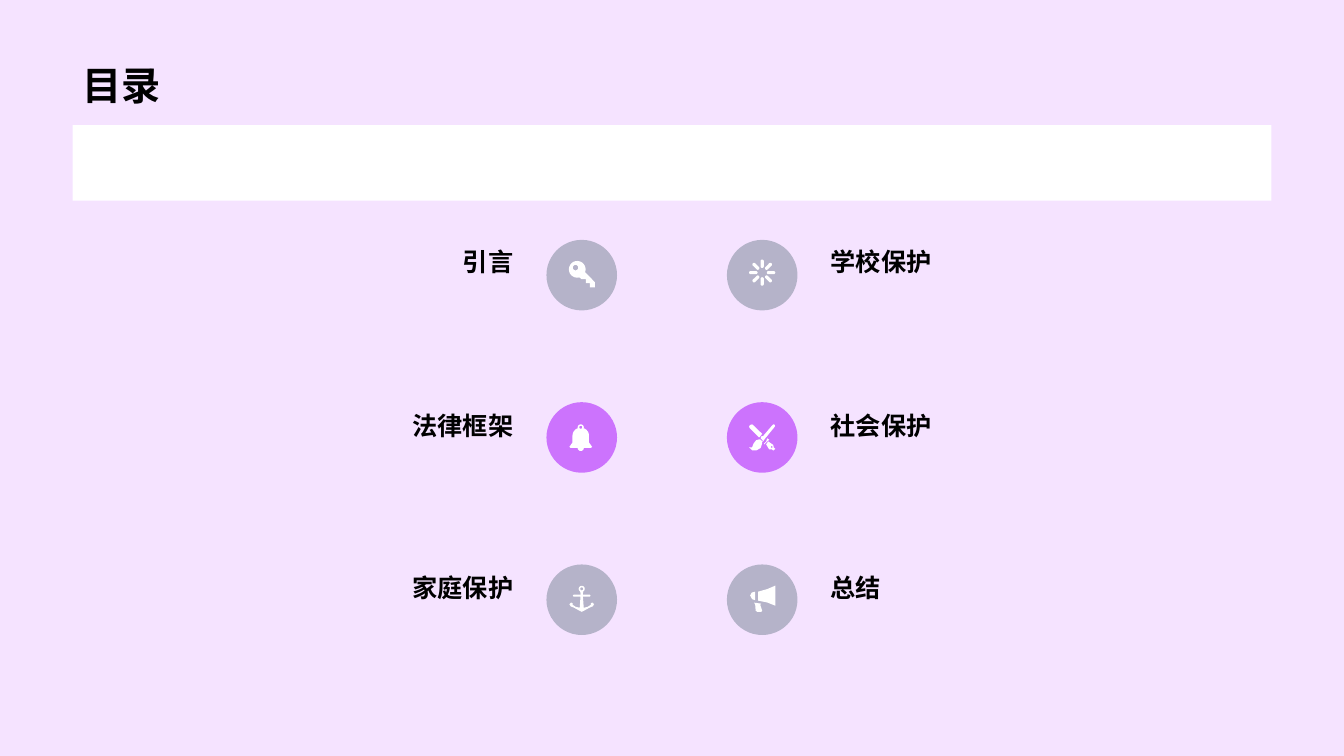
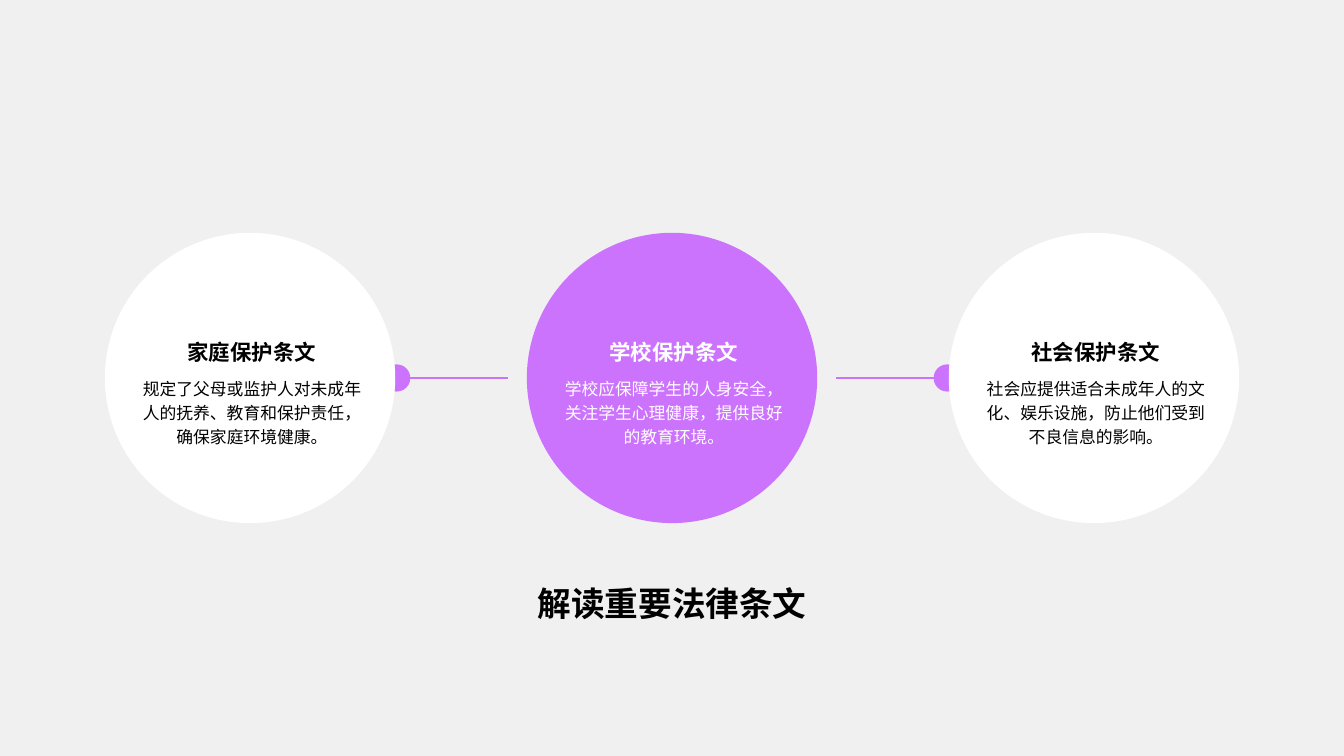
from dataclasses import dataclass
from math import cos, radians, sin

from lxml import etree
from pptx import Presentation
from pptx import util as u
from pptx.dml.color import RGBColor
from pptx.enum import shapes, text
from pptx.oxml.ns import qn

Point = tuple[float, float]
Outline = list[Point]

FONT = "Arial"
BLACK = RGBColor(0x00, 0x00, 0x00)
WHITE = RGBColor(0xFF, 0xFF, 0xFF)
LILAC = RGBColor(0xF5, 0xE3, 0xFF)
PURPLE = RGBColor(0xCC, 0x73, 0xFD)
SLATE = RGBColor(0x77, 0x84, 0x95)
PALE_GREY = RGBColor(0xF0, 0xF0, 0xF0)

WIDTH, HEIGHT = 13.33, 7.5
CENTRE = WIDTH / 2
MARGIN = 0.72
CONTENT_WIDTH = WIDTH - 2 * MARGIN

DISC = 0.7
DISC_COLUMNS = (5.77, 7.56)
FIRST_ROW, ROW_PITCH = 2.73, 1.61
LABEL_BOTTOMS = (2.79, 4.42, 6.03)
LABEL_LEFTS = (0.73, 8.14)
LABEL_WIDTH, LABEL_HEIGHT = 4.46, 0.56

CIRCLE, CIRCLE_PITCH = 2.88, 4.185
DOT = 0.27
DOT_OFFSET, LINE_OFFSET = 2.73, 1.63
CLAUSE_WIDTH = 2.37
CLAUSE_SHIFT = 0.02


@dataclass(frozen=True)
class Topic:
    label: str
    column: int
    row: int
    icon: list[Outline]


@dataclass(frozen=True)
class Clause:
    heading: str
    body: str
    fill: RGBColor
    ink: RGBColor


def arc(x: float, y: float, radius: float, start: float = 0, sweep: float = 360) -> Outline:
    steps = 20
    angles = [radians(start + sweep * step / steps) for step in range(steps + 1)]
    return [(x + radius * cos(angle), y + radius * sin(angle)) for angle in angles]


def key_icon() -> list[Outline]:
    shaft = [(130, 70), (130, 120), (80, 120), (80, 80), (40, 80), (40, 40), (0, 40)]
    return [arc(-45, -58, 83, 75, 305) + shaft, arc(-62, -75, 27)]


def bell_icon() -> list[Outline]:
    base = [(-92, 50), (-122, 92), (-112, 104), (-40, 104)]
    clapper = arc(-10, 104, 30, 180, -180)
    side = [(92, 104), (102, 92), (72, 50)]
    dome = arc(-10, -15, 82, 0, -68) + arc(-10, -100, 30, 30, -240) + arc(-10, -15, 82, -112, -68)
    return [base + clapper + side + dome, arc(-10, -101, 15)]


def anchor_icon() -> list[Outline]:
    half = [(-10, -50), (-80, -50), (-88, -40), (-80, -30), (-12, -30), (-20, 80),
            (-60, 70), (-90, 50), (-90, 35), (-105, 28), (-122, 45), (-110, 65),
            (-75, 80), (-30, 105), (0, 120)]
    mirrored = [(-x, y) for x, y in reversed(half)]
    return [arc(0, -108, 30, 60, -300) + half + mirrored, arc(0, -108, 15)]


def spoke(angle: float) -> Outline:
    across, down = cos(radians(angle)), sin(radians(angle))
    outer, inner, rise, radius = 114, 62, -25, 16
    return (arc(outer * across, rise + outer * down, radius, angle - 90, 180)
            + arc(inner * across, rise + inner * down, radius, angle + 90, 180))


def tools_icon() -> list[Outline]:
    bristles = [(-30, 20), (-15, 22), (0, 40), (0, 60), (-15, 105), (-55, 128),
                (-95, 130), (-130, 100), (-100, 98), (-85, 60), (-60, 28)]
    handle = [(110, -130), (125, -125), (128, -112), (120, -100), (30, 10), (5, 45),
              (5, 30), (-15, 8), (-10, -10), (10, -14), (100, -120)]
    blade = [(-100, -130), (-90, -122), (0, -35), (-20, -10), (-30, 0), (-122, -90),
             (-130, -105), (-122, -122)]
    collar = [(50, 10), (70, 22), (20, 70), (20, 60), (40, 40)]
    tip = [(60, 40), (110, 75), (115, 100), (130, 115), (110, 130), (95, 118),
           (70, 120), (40, 70)]
    return [bristles, handle, blade, collar, tip, arc(95, 95, 9)]


def megaphone_icon() -> list[Outline]:
    grip = [(-80, 30), (-60, 32), (-10, 40), (-20, 50), (0, 110), (-10, 120),
            (-50, 120), (-65, 110), (-70, 50)]
    ear = [(-70, -80), (-70, 5), (-100, -5), (-120, -40), (-105, -70)]
    horn = [(130, -140), (130, 60), (50, 28), (-40, 10), (-40, -80), (50, -105)]
    return [grip, ear, horn]


TOPICS = (
    Topic("引言", 0, 0, key_icon()),
    Topic("法律框架", 0, 1, bell_icon()),
    Topic("家庭保护", 0, 2, anchor_icon()),
    Topic("学校保护", 1, 0, [spoke(45 * turn) for turn in range(8)]),
    Topic("社会保护", 1, 1, tools_icon()),
    Topic("总结", 1, 2, megaphone_icon()),
)

CLAUSES = (
    Clause("家庭保护条文", "规定了父母或监护人对未成年人的抚养、教育和保护责任，确保家庭环境健康。",
           WHITE, BLACK),
    Clause("学校保护条文", "学校应保障学生的人身安全，关注学生心理健康，提供良好的教育环境。",
           PURPLE, WHITE),
    Clause("社会保护条文", "社会应提供适合未成年人的文化、娱乐设施，防止他们受到不良信息的影响。",
           WHITE, BLACK),
)


def add_page(deck, color: RGBColor):
    page = deck.slides.add_slide(deck.slide_layouts[6])
    page.background.fill.solid()
    page.background.fill.fore_color.rgb = color
    return page


def paint(shape, color: RGBColor) -> None:
    shape.shadow.inherit = False
    shape.fill.solid()
    shape.fill.fore_color.rgb = color
    shape.line.fill.background()


def add_rectangle(page, left: float, top: float, width: float, height: float, color: RGBColor):
    box = page.shapes.add_shape(shapes.MSO_SHAPE.RECTANGLE, u.Inches(left), u.Inches(top),
                                u.Inches(width), u.Inches(height))
    paint(box, color)


def add_disc(page, x: float, y: float, size: float, color: RGBColor, opacity: int = 100) -> None:
    disc = page.shapes.add_shape(shapes.MSO_SHAPE.OVAL, u.Inches(x - size / 2),
                                 u.Inches(y - size / 2), u.Inches(size), u.Inches(size))
    paint(disc, color)
    if opacity < 100:
        tone = disc.fill._xPr.find(qn("a:solidFill"))[0]
        etree.SubElement(tone, qn("a:alpha"), val=str(opacity * 1000))


def add_icon(page, x: float, y: float, outlines: list[Outline]) -> None:
    builder = page.shapes.build_freeform(*outlines[0][0], scale=u.Inches(1) / 1000)
    for index, outline in enumerate(outlines):
        if index:
            builder.move_to(*outline[0])
        builder.add_line_segments(outline[1:], close=True)
    paint(builder.convert_to_shape(u.Inches(x), u.Inches(y)), WHITE)


def add_line(page, start: float, end: float, y: float) -> None:
    line = page.shapes.add_connector(shapes.MSO_CONNECTOR.STRAIGHT, u.Inches(start),
                                     u.Inches(y), u.Inches(end), u.Inches(y))
    line.line.color.rgb = PURPLE
    line.line.width = u.Pt(1)
    etree.SubElement(line._element.spPr, qn("a:effectLst"))


def add_text(page, words: str, left: float, top: float, width: float, height: float, *,
             size: float, color: RGBColor = BLACK, bold: bool = True,
             align=text.PP_ALIGN.LEFT, anchor=text.MSO_ANCHOR.BOTTOM,
             spacing: float = 1.0) -> None:
    box = page.shapes.add_textbox(u.Inches(left), u.Inches(top), u.Inches(width), u.Inches(height))
    frame = box.text_frame
    frame.word_wrap = True
    frame.vertical_anchor = anchor
    para = frame.paragraphs[0]
    para.alignment = align
    para.line_spacing = spacing
    span = para.add_run()
    span.text = words
    span.font.name = FONT
    span.font.size = u.Pt(size)
    span.font.bold = bold
    span.font.color.rgb = color


def build_contents(deck) -> None:
    page = add_page(deck, LILAC)
    add_text(page, "目录", MARGIN, 0.14, CONTENT_WIDTH, 0.98, size=28)
    for topic in TOPICS:
        x, y = DISC_COLUMNS[topic.column], FIRST_ROW + topic.row * ROW_PITCH
        highlighted = topic.row == 1
        add_disc(page, x, y, DISC, PURPLE if highlighted else SLATE, 100 if highlighted else 50)
        add_icon(page, x, y, topic.icon)
        add_text(page, topic.label, LABEL_LEFTS[topic.column],
                 LABEL_BOTTOMS[topic.row] - LABEL_HEIGHT, LABEL_WIDTH, LABEL_HEIGHT, size=18,
                 align=text.PP_ALIGN.LEFT if topic.column else text.PP_ALIGN.RIGHT)
    add_rectangle(page, MARGIN, 1.24, CONTENT_WIDTH, 0.75, WHITE)


def build_clauses(deck) -> None:
    page = add_page(deck, PALE_GREY)
    middle = HEIGHT / 2
    for side in (-1, 1):
        add_line(page, CENTRE + side * (DOT_OFFSET - DOT / 2), CENTRE + side * LINE_OFFSET, middle)
        add_disc(page, CENTRE + side * DOT_OFFSET, middle, DOT, PURPLE)
    add_text(page, "解读重要法律条文", MARGIN, 5.26, CONTENT_WIDTH, 1.44, size=24,
             align=text.PP_ALIGN.CENTER, anchor=text.MSO_ANCHOR.MIDDLE)
    for index, clause in enumerate(CLAUSES):
        x = CENTRE + (index - 1) * CIRCLE_PITCH
        left = x - CLAUSE_WIDTH / 2 + CLAUSE_SHIFT
        add_disc(page, x, middle, CIRCLE, clause.fill)
        add_text(page, clause.heading, left, 3.35, CLAUSE_WIDTH, 0.32, size=15.3,
                 color=clause.ink, align=text.PP_ALIGN.CENTER)
        add_text(page, clause.body, left, 3.67, CLAUSE_WIDTH, 0.87, size=12,
                 color=clause.ink, bold=False, align=text.PP_ALIGN.CENTER,
                 anchor=text.MSO_ANCHOR.TOP, spacing=1.2)


def main() -> None:
    deck = Presentation()
    deck.slide_width, deck.slide_height = u.Inches(WIDTH), u.Inches(HEIGHT)
    build_contents(deck)
    build_clauses(deck)
    deck.save("out.pptx")


if __name__ == "__main__":
    main()
